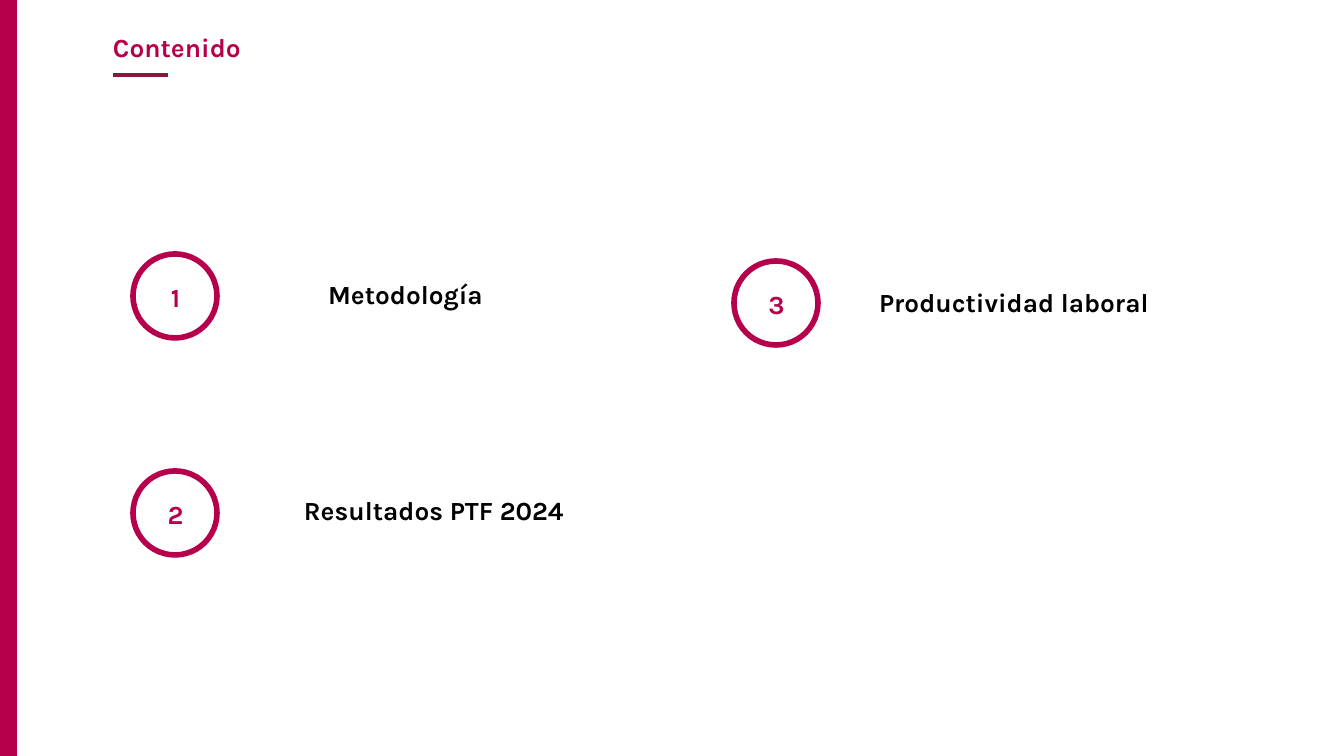
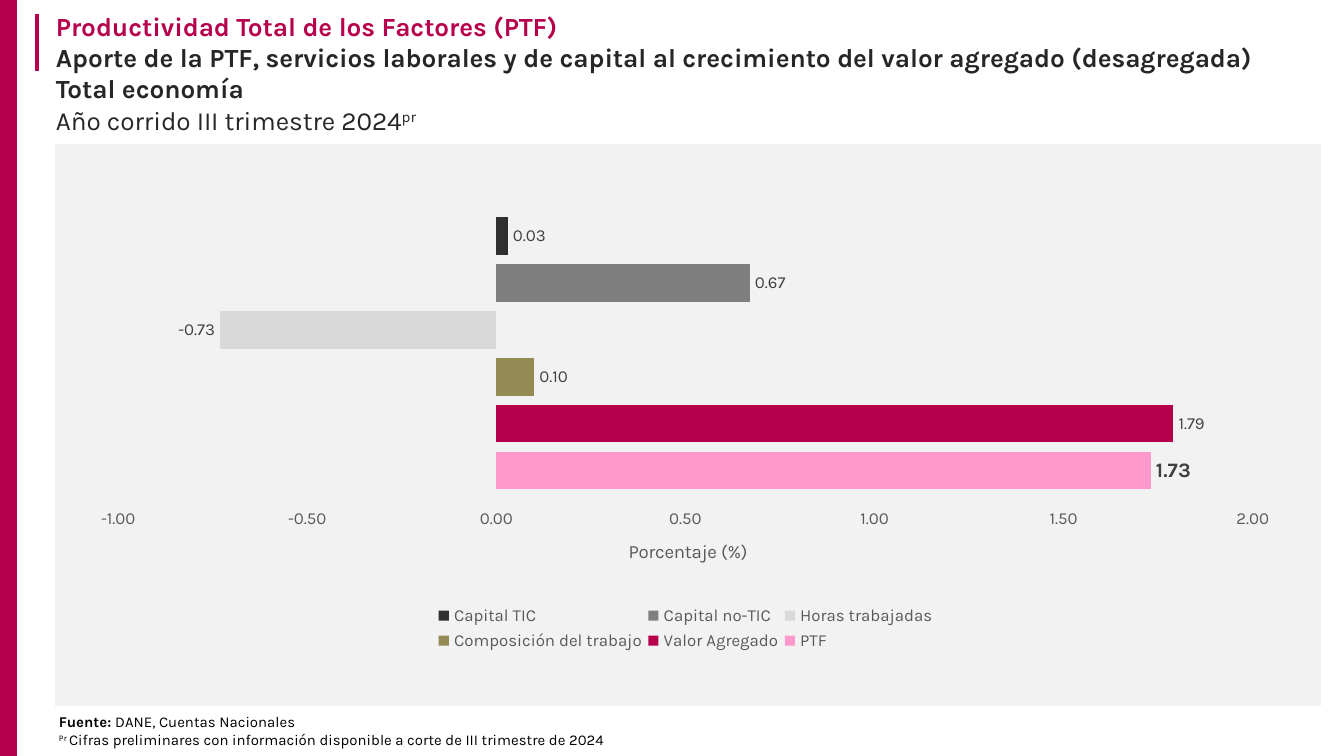
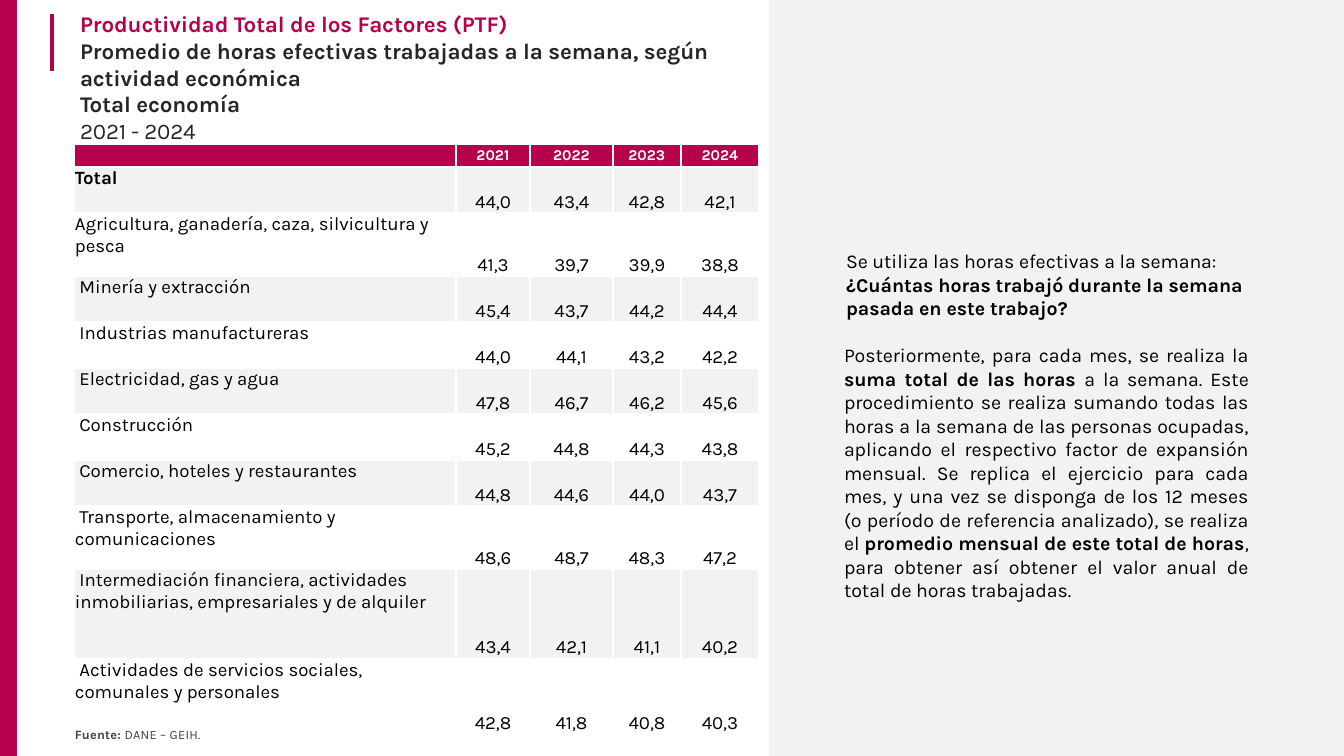
from lxml import etree
from pptx import Presentation
from pptx.chart.data import CategoryChartData
from pptx.dml.color import RGBColor
from pptx.enum.chart import XL_CHART_TYPE, XL_LABEL_POSITION, XL_LEGEND_POSITION, XL_TICK_MARK
from pptx.enum.shapes import MSO_CONNECTOR, MSO_SHAPE
from pptx.enum.text import MSO_ANCHOR, MSO_AUTO_SIZE, PP_ALIGN
from pptx.oxml.ns import qn
from pptx.util import Emu, Pt

PX = 914400 / 134.4
SLIDE_W, SLIDE_H = 1344, 756
FONT = "Karla"
COLORS = {
    "brand": "B6004C", "rule": "8D143D", "header": "B7024D", "panel": "F2F2F2",
    "white": "FFFFFF", "black": "000000", "title": "262626", "label": "404040",
    "axis": "595959", "ptf": "FF99CC", "composition": "948A54", "hours": "D9D9D9",
    "non_ict": "7F7F7F", "ict": "2F2F2F",
}
RECT, OVAL = MSO_SHAPE.RECTANGLE, MSO_SHAPE.OVAL
STRAIGHT = MSO_CONNECTOR.STRAIGHT
LEFT, CENTER, JUSTIFY = PP_ALIGN.LEFT, PP_ALIGN.CENTER, PP_ALIGN.JUSTIFY
TOP, MIDDLE, BOTTOM = MSO_ANCHOR.TOP, MSO_ANCHOR.MIDDLE, MSO_ANCHOR.BOTTOM
GROW = MSO_AUTO_SIZE.SHAPE_TO_FIT_TEXT
PTF_TITLE = "Productividad Total de los Factores (PTF)"

CONTENTS = [  # badge position, label offset and width
    ("1", "Metodología", (133, 254), (112, 17), 321),
    ("2", "Resultados PTF 2024", (133, 471), (111, 16), 380),
    ("3", "Productividad laboral", (734, 261), (90, 18), 380),
]
CONTRIBUTIONS = [
    ("PTF", 1.73, "ptf"),
    ("Valor Agregado", 1.79, "brand"),
    ("Composición del trabajo", 0.10, "composition"),
    ("Horas trabajadas", -0.73, "hours"),
    ("Capital no-TIC", 0.67, "non_ict"),
    ("Capital TIC", 0.03, "ict"),
]
YEARS = ["2021", "2022", "2023", "2024"]
COLUMN_WIDTHS = [382, 74, 83, 68, 78]
HEADER_HEIGHT = 23
HOURS = [  # row height, activity, hours by year
    (46, "Total", "44,0 43,4 42,8 42,1"),
    (63, "Agricultura, ganadería, caza, silvicultura y pesca", "41,3 39,7 39,9 38,8"),
    (46, " Minería y extracción", "45,4 43,7 44,2 44,4"),
    (46, " Industrias manufactureras", "44,0 44,1 43,2 42,2"),
    (46, " Electricidad, gas y agua", "47,8 46,7 46,2 45,6"),
    (46, " Construcción", "45,2 44,8 44,3 43,8"),
    (46, " Comercio, hoteles y restaurantes", "44,8 44,6 44,0 43,7"),
    (63, " Transporte, almacenamiento y comunicaciones", "48,6 48,7 48,3 47,2"),
    (90, " Intermediación financiera, actividades inmobiliarias, empresariales y de alquiler",
     "43,4 42,1 41,1 40,2"),
    (76, " Actividades de servicios sociales, comunales y personales",
     "42,8 41,8 40,8 40,3"),
]


def px(value):
    return Emu(round(value * PX))


def rgb(name):
    return RGBColor.from_string(COLORS[name])


def style_font(font, size, color, bold=False):
    for attribute, value in {"name": FONT, "size": Pt(size), "bold": bold}.items():
        setattr(font, attribute, value)
    font.color.rgb = rgb(color)


def set_insets(frame, insets):
    sides = ("margin_left", "margin_top", "margin_right", "margin_bottom")
    for side, inset in zip(sides, insets):
        setattr(frame, side, px(inset))


def write_paragraph(paragraph, runs, size, color="black", align=LEFT, indent=0,
                    before=None, spacing=None):
    """Each run is (text, bold) or (text, bold, baseline in 1/1000 %)."""
    paragraph.alignment = align
    if indent:
        paragraph._p.get_or_add_pPr().set("marL", str(px(indent)))
    if before:
        paragraph.space_before = Pt(before)
    for text, bold, *baseline in runs:
        run = paragraph.add_run()
        run.text = text
        style_font(run.font, size, color, bold)
        properties = run._r.get_or_add_rPr()
        if spacing:
            properties.set("spc", str(spacing))
        if baseline:
            properties.set("baseline", str(baseline[0]))


def add_text(slide, box, paragraphs, insets=(13, 7, 13, 7), anchor=TOP):
    """Each paragraph is a dict of arguments for write_paragraph."""
    frame = slide.shapes.add_textbox(*map(px, box)).text_frame
    frame.word_wrap = True
    frame.auto_size = GROW
    frame.vertical_anchor = anchor
    set_insets(frame, insets)
    for index, content in enumerate(paragraphs):
        paragraph = frame.add_paragraph() if index else frame.paragraphs[0]
        write_paragraph(paragraph, **content)


def add_block(slide, box, fill=None, line=None, kind=RECT):
    block = slide.shapes.add_shape(kind, *map(px, box))
    block.shadow.inherit = False
    if fill:
        block.fill.solid()
        block.fill.fore_color.rgb = rgb(fill)
    else:
        block.fill.background()
    if line:
        block.line.color.rgb = rgb(line)
        block.line.width = Pt(3)
    else:
        block.line.fill.background()


def add_rule(slide, start, end, color):
    rule = slide.shapes.add_connector(STRAIGHT, *map(px, start + end))
    rule.line.color.rgb = rgb(color)
    rule.line.width = Pt(2)
    etree.SubElement(rule._element.spPr, qn("a:effectLst"))


def new_slide(deck):
    slide = deck.slides.add_slide(deck.slide_layouts[6])
    add_block(slide, (0, 0, 17, SLIDE_H), "brand")
    return slide


def add_heading(slide, box, size, rule_gap, subtitles, period):
    """Brand title, bold subtitles and a plain period, with a rule on the left."""
    left, top = box[:2]
    lines = [[(PTF_TITLE, True)]] + [[(text, True)] for text in subtitles] + [period]
    add_text(slide, box, [
        {"runs": runs, "size": size, "color": "title" if index else "brand",
         "indent": 1, "spacing": -5}
        for index, runs in enumerate(lines)], insets=(9, 5, 9, 5))
    rule_x = left - rule_gap
    add_rule(slide, (rule_x, top + 66), (rule_x, top + 9), "brand")


# Contents slide
def add_content_item(slide, number, label, badge, label_offset, label_width):
    left, top = badge
    dx, dy = label_offset
    add_block(slide, (left, top, 84, 84), line="brand", kind=OVAL)
    for text, color, box in (
            (number, "brand", (left + 14, top + 20, 57, 46)),
            (label, "black", (left + dx, top + dy, label_width, 46))):
        add_text(slide, box, [{"runs": [(text, True)], "size": 14, "color": color,
                               "align": CENTER}])


def build_contents(deck):
    slide = new_slide(deck)
    add_text(slide, (113, 31, 187, 32),
             [{"runs": [("Contenido", True)], "size": 14, "color": "brand"}],
             insets=(0, 0, 0, 0))
    for item in CONTENTS:
        add_content_item(slide, *item)
    add_rule(slide, (168, 75), (113, 75), "rule")


# Contributions slide
def place_chart_part(element, index, bounds, inner=False):
    """Fix a chart part by fractions of the chart: x, y and maybe w, h."""
    layout = element.find(qn("c:layout"))
    if layout is None:
        layout = etree.Element(qn("c:layout"))
        element.insert(index, layout)
    manual = etree.SubElement(layout, qn("c:manualLayout"))
    settings = [("layoutTarget", "inner")] if inner else []
    settings += [("xMode", "edge"), ("yMode", "edge"), *zip("xywh", bounds)]
    for tag, value in settings:
        etree.SubElement(manual, qn("c:" + tag), val=str(value))


def add_contributions_chart(slide, box):
    data = CategoryChartData(number_format="0.00")
    data.categories = ["1"]
    for name, value, _ in CONTRIBUTIONS:
        data.add_series(name, [value])
    chart = slide.shapes.add_chart(XL_CHART_TYPE.BAR_CLUSTERED, *map(px, box), data).chart
    style_font(chart.font, 10, "black")
    chart.has_title = False

    # Bars and value labels
    plot = chart.plots[0]
    for attribute, value in {"gap_width": 75, "overlap": -25,
                             "vary_by_categories": False}.items():
        setattr(plot, attribute, value)
    for series, (name, _, color) in zip(plot.series, CONTRIBUTIONS):
        series.invert_if_negative = False
        series.format.fill.solid()
        series.format.fill.fore_color.rgb = rgb(color)
        labels = series.data_labels
        for attribute, value in {"show_value": True, "number_format": "0.00",
                                 "number_format_is_linked": False,
                                 "position": XL_LABEL_POSITION.OUTSIDE_END}.items():
            setattr(labels, attribute, value)
        main_result = name == "PTF"
        style_font(labels.font, 11 if main_result else 9, "label", main_result)

    # Axes
    chart.category_axis.visible = False
    percent = chart.value_axis
    for attribute, value in {"minimum_scale": -1, "maximum_scale": 2, "major_unit": 0.5,
                             "has_major_gridlines": False,
                             "major_tick_mark": XL_TICK_MARK.NONE,
                             "minor_tick_mark": XL_TICK_MARK.NONE}.items():
        setattr(percent, attribute, value)
    percent.format.line.fill.background()
    percent.tick_labels.number_format = "0.00"
    percent.tick_labels.number_format_is_linked = False
    style_font(percent.tick_labels.font, 9, "axis")
    write_paragraph(percent.axis_title.text_frame.paragraphs[0],
                    [("Porcentaje (%)", False)], 10, "axis", CENTER)

    # Legend
    chart.has_legend = True
    legend = chart.legend
    legend.position = XL_LEGEND_POSITION.BOTTOM
    legend.include_in_layout = False
    style_font(legend.font, 9, "axis")

    place_chart_part(chart._chartSpace.chart.plotArea, 0, (0.03, 0.02, 0.94, 0.65), True)
    place_chart_part(percent.axis_title._element, 1, (0.45, 0.74))
    place_chart_part(legend._element, 1, (0.29, 0.88, 0.42, 0.12))


def build_contributions(deck):
    slide = new_slide(deck)
    add_block(slide, (55, 144, 1266, 562), "panel")
    add_text(slide, (46, 706, 642, 50), [
        {"runs": [("Fuente: ", True), ("DANE, Cuentas Nacionales", False)], "size": 8},
        {"runs": [("Pr ", False, 30000),
                  ("Cifras preliminares con información disponible a corte de "
                   "III trimestre de 2024", False)], "size": 8}])
    add_heading(slide, (46, 5, 1223, 159), 14, 9, [
        "Aporte de la PTF, servicios laborales y de capital al crecimiento del valor "
        "agregado (desagregada)", "Total economía"],
        [("Año corrido III trimestre 2024", False), ("pr", False, 30000)])
    add_contributions_chart(slide, (82, 194, 1207, 462))


# Weekly hours slide
def fill_cell(cell, text, fill, size, color, bold, align, anchor,
              sides=("lnL", "lnR", "lnT", "lnB")):
    set_insets(cell, (1, 1, 1, 0))
    cell.vertical_anchor = anchor
    properties = cell._tc.get_or_add_tcPr()
    for side in ("lnL", "lnR", "lnT", "lnB"):
        border = etree.SubElement(properties, qn("a:" + side), w=str(Pt(1)))
        if side in sides:
            solid = etree.SubElement(border, qn("a:solidFill"))
            etree.SubElement(solid, qn("a:srgbClr"), val=COLORS["white"])
        else:
            etree.SubElement(border, qn("a:noFill"))
    if fill:
        cell.fill.solid()
        cell.fill.fore_color.rgb = rgb(fill)
    else:
        cell.fill.background()
    paragraph = cell.text_frame.paragraphs[0]
    if text:
        write_paragraph(paragraph, [(text, bold)], size, color, align)
    else:
        etree.SubElement(paragraph._p, qn("a:endParaRPr"), sz=str(size * 100))


def add_hours_table(slide, left, top):
    heights = [HEADER_HEIGHT] + [height for height, _, _ in HOURS]
    table = slide.shapes.add_table(
        len(heights), len(COLUMN_WIDTHS), px(left), px(top),
        px(sum(COLUMN_WIDTHS)), px(sum(heights))).table
    table.first_row = table.horz_banding = False
    for column, width in zip(table.columns, COLUMN_WIDTHS):
        column.width = px(width)
    for row, height in zip(table.rows, heights):
        row.height = px(height)

    for index, year in enumerate(["", *YEARS]):
        fill_cell(table.cell(0, index), year, "header", 8, "white", True, CENTER, MIDDLE)
    for index, (_, activity, hours) in enumerate(HOURS, start=1):
        fill = "panel" if index % 2 else None
        # The last row stays open below, where the source note sits
        sides = ("lnL", "lnR", "lnT") + (("lnB",) if index < len(HOURS) else ())
        fill_cell(table.cell(index, 0), activity, fill, 10, "black",
                  activity == "Total", LEFT, TOP, sides)
        for column, value in enumerate(hours.split(), start=1):
            fill_cell(table.cell(index, column), value, fill, 10, "black",
                      False, CENTER, BOTTOM, sides)


def add_method_note(slide, box):
    add_text(slide, box, [
        {"runs": [("Se utiliza las horas efectivas a la semana:", False)],
         "size": 10.5, "indent": 2},
        {"runs": [("¿Cuántas horas trabajó durante la semana pasada en este trabajo?", True)],
         "size": 10.5, "indent": 2},
        {"runs": [
            ("Posteriormente, para cada mes, se realiza la ", False),
            ("suma total de las horas ", True),
            ("a la semana. Este procedimiento se realiza sumando todas las horas a la "
             "semana de las personas ocupadas, aplicando el respectivo factor de "
             "expansión mensual. Se replica el ejercicio para cada mes, y una vez se "
             "disponga de los 12 meses (o período de referencia analizado), se realiza "
             "el ", False),
            ("promedio mensual de este total de horas", True),
            (", para obtener así obtener el valor anual de total de horas trabajadas.",
             False)],
         "size": 10.5, "align": JUSTIFY, "before": 12.6}])


def build_weekly_hours(deck):
    slide = new_slide(deck)
    add_block(slide, (769, 0, SLIDE_W - 769, SLIDE_H), "panel")
    add_hours_table(slide, 74, 144)
    add_text(slide, (74, 726, 1231, 16), [
        {"runs": [("Fuente: ", True), ("DANE – GEIH.", False)], "size": 6.8,
         "color": "label", "indent": 1, "spacing": 10}],
        insets=(0, 1, 0, 0), anchor=BOTTOM)
    add_method_note(slide, (831, 242, 431, 370))
    add_heading(slide, (70, 5, 691, 146), 12, 18, [
        "Promedio de horas efectivas trabajadas a la semana, según actividad económica",
        "Total economía"], [("2021 - 2024", False)])


def main():
    deck = Presentation()
    deck.slide_width, deck.slide_height = px(SLIDE_W), px(SLIDE_H)
    for build in (build_contents, build_contributions, build_weekly_hours):
        build(deck)
    deck.save("out.pptx")


if __name__ == "__main__":
    main()
